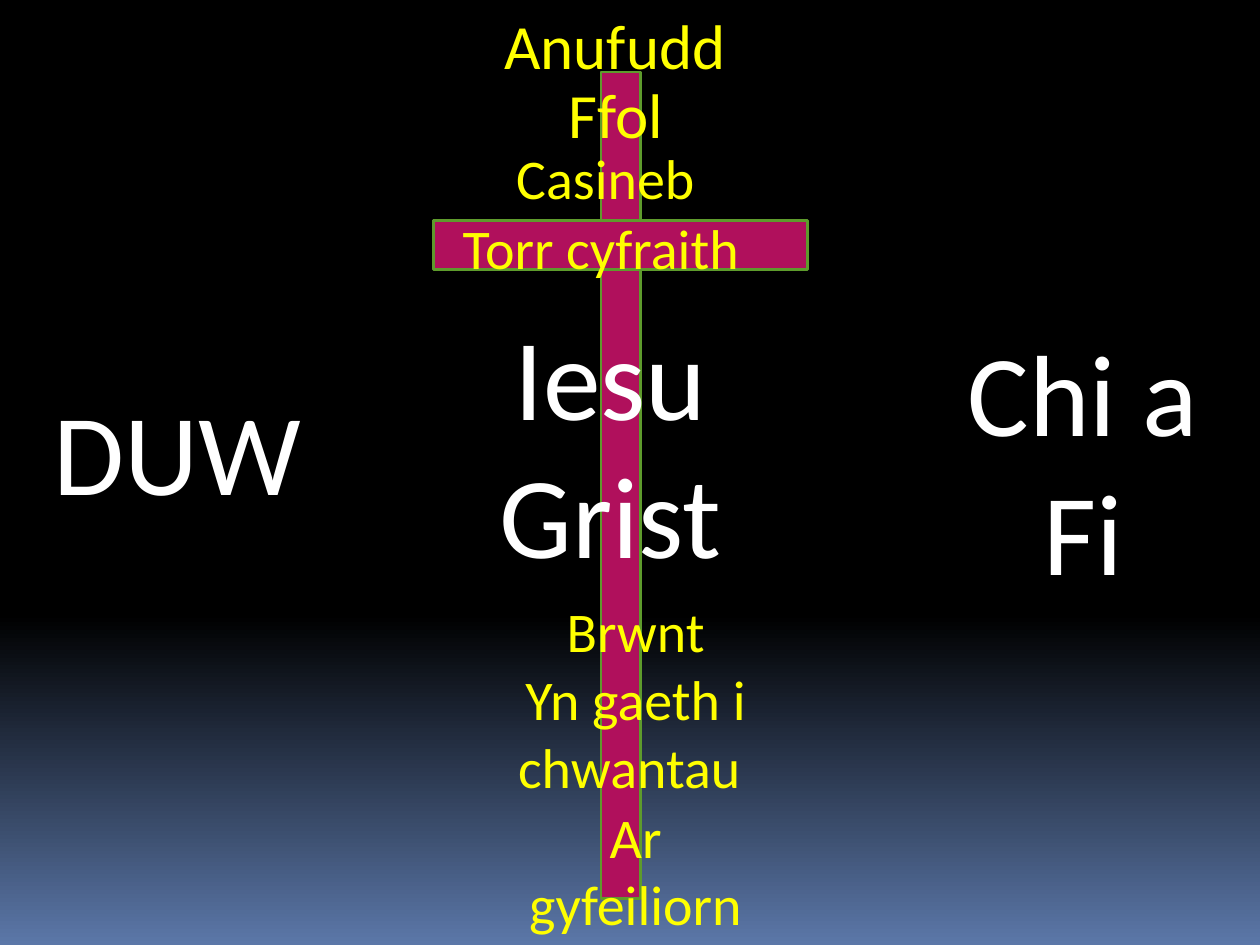
from copy import deepcopy

from pptx import Presentation
from pptx.dml.color import RGBColor
from pptx.enum.shapes import MSO_SHAPE as Shape
from pptx.enum.text import MSO_AUTO_SIZE as Fit, PP_ALIGN as Align
from pptx.oxml.ns import qn
from pptx.util import Cm, Pt

WHITE = "FFFFFF"
YELLOW = "FFFF00"
BLACK = "000000"
BLUE = "5B77A8"
PINK = "B0105C"
GREEN = "5E9B2C"

BEAMS = [
    (12.12, 1.45, 0.79, 16.66),
    (8.74, 4.45, 7.54, 0.99),
]

NAMES = [
    ("DUW", 0, 7.54, 7.14, 3.07),
    ("Chi a Fi", 18.26, 6.35, 7.14, 5.89),
    ("Iesu Grist", 8.74, 6.02, 7.14, 5.89),
]

SINS = [
    ("Anufudd", 9.12, 0, 6.55, 1.8, 36),
    ("Ffol", 9.73, 1.4, 5.36, 1.8, 36),
    ("Casineb", 9.32, 2.77, 5.77, 1.63, 32),
    ("Brwnt", 9.93, 11.91, 5.77, 1.63, 32),
    ("Torr cyfraith", 8.94, 4.17, 6.35, 1.63, 32),
    ("Ar gyfeiliorn", 9.93, 16.05, 5.77, 3, 32),
    ("Yn gaeth i chwantau ", 9.93, 13.28, 5.77, 3, 32),
]


def tint(code):
    return RGBColor.from_string(code)


def paint_back(slide):
    fill = slide.background.fill
    fill.gradient()
    fill.gradient_angle = 270
    first, last = fill.gradient_stops
    first.color.rgb, first.position = tint(BLACK), 0
    last.color.rgb, last.position = tint(BLUE), 1
    stops = next(slide.element.iter(qn("a:gsLst")))
    mid = deepcopy(stops[0])
    mid.set("pos", "65000")
    stops.insert(1, mid)


def add_cross(slide):
    cross = slide.shapes.add_group_shape()
    for box in BEAMS:
        beam = cross.shapes.add_shape(Shape.RECTANGLE, *map(Cm, box))
        beam.shadow.inherit = False
        beam.fill.solid()
        beam.fill.fore_color.rgb = tint(PINK)
        beam.line.color.rgb = tint(GREEN)
        beam.line.width = Pt(1.5)


def add_label(slide, text, box, size, color):
    frame = slide.shapes.add_textbox(*map(Cm, box)).text_frame
    frame.word_wrap = True
    frame.auto_size = Fit.SHAPE_TO_FIT_TEXT
    frame.text = text
    line = frame.paragraphs[0]
    line.alignment = Align.CENTER
    font = line.runs[0].font
    font.name = "Calibri"
    font.size = Pt(size)
    font.color.rgb = tint(color)


def main():
    deck = Presentation()
    deck.slide_width, deck.slide_height = Cm(25.4), Cm(19.05)
    slide = deck.slides.add_slide(deck.slide_layouts[6])
    paint_back(slide)
    add_cross(slide)
    for text, *box in NAMES:
        add_label(slide, text, box, 66, WHITE)
    for text, *box, size in SINS:
        add_label(slide, text, box, size, YELLOW)
    deck.save("out.pptx")


if __name__ == "__main__":
    main()
